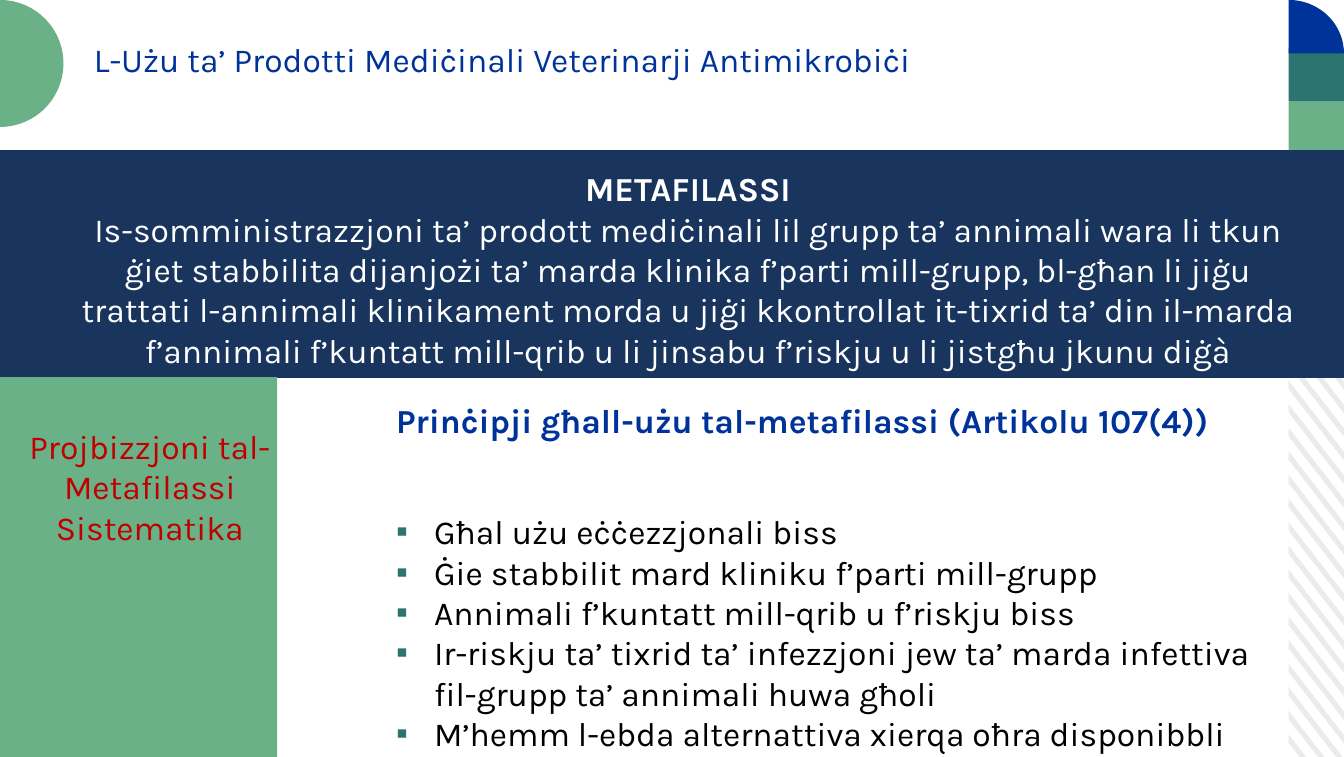
"""Build the slide on metaphylaxis in veterinary antimicrobial use."""
import math
from dataclasses import dataclass

import pptx
import pptx.dml.color
import pptx.enum.shapes
import pptx.enum.text
import pptx.oxml.ns
import pptx.util
from lxml import etree

Pt = pptx.util.Pt
ALIGN = pptx.enum.text.PP_ALIGN


@dataclass(frozen=True)
class Theme:
    """Hold the colours, font and type size."""
    font: str = "Karla"
    size: int = 24
    blue: str = "003399"
    navy: str = "19355D"
    teal: str = "2C7470"
    green: str = "6BB188"
    stripe: str = "ECEBEB"
    red: str = "C00000"
    white: str = "FFFFFF"
    black: str = "000000"


THEME = Theme()
SLIDE_WIDTH, SLIDE_HEIGHT = 960, 540.72
STRIP_LEFT, STRIP_WIDTH, BLOCK_HEIGHT = 920.5, 39.5, 38.16
BLOCKS_TOP, STRIPES_TOP = 34.56, 110.88

TITLE = "L-Użu ta’ Prodotti Mediċinali Veterinarji Antimikrobiċi"
TERM = "METAFILASSI"
DEFINITION = (
    "Is-somministrazzjoni ta’ prodott mediċinali lil grupp ta’ annimali wara li tkun "
    "ġiet stabbilita dijanjożi ta’ marda klinika f’parti mill-grupp, bl-għan li jiġu "
    "trattati l-annimali klinikament morda u jiġi kkontrollat it-tixrid ta’ din il-marda "
    "f’annimali f’kuntatt mill-qrib u li jinsabu f’riskju u li jistgħu jkunu diġà"
)
PROHIBITION = "Projbizzjoni tal-Metafilassi Sistematika"
HEADING = "Prinċipji għall-użu tal-metafilassi (Artikolu 107(4))"
PRINCIPLES = [
    "Għal użu eċċezzjonali biss",
    "Ġie stabbilit mard kliniku f’parti mill-grupp",
    "Annimali f’kuntatt mill-qrib u f’riskju biss",
    "Ir-riskju ta’ tixrid ta’ infezzjoni jew ta’ marda infettiva "
    "fil-grupp ta’ annimali huwa għoli",
    "M’hemm l-ebda alternattiva xierqa oħra disponibbli",
]


def paint(shape, colour):
    """Give a shape a flat fill with no line or shadow."""
    shape.shadow.inherit = False
    shape.fill.solid()
    shape.fill.fore_color.rgb = pptx.dml.color.RGBColor.from_string(colour)
    shape.line.fill.background()


def add_block(slide, left, top, width, height, colour):
    """Add a plain filled rectangle."""
    block = slide.shapes.add_shape(
        pptx.enum.shapes.MSO_SHAPE.RECTANGLE, Pt(left), Pt(top), Pt(width), Pt(height))
    paint(block, colour)


def add_outline(slide, contours, colour):
    """Add one freeform made of closed contours given in points."""
    contours = [[(Pt(x), Pt(y)) for x, y in contour] for contour in contours]
    builder = slide.shapes.build_freeform(*contours[0][0])
    for index, contour in enumerate(contours):
        if index:
            builder.move_to(*contour[0])
        builder.add_line_segments(contour[1:], close=True)
    paint(builder.convert_to_shape(), colour)


def add_sector(slide, centre, radii, end_angle, colour):
    """Add a sector that runs clockwise from the top to the end angle."""
    angles = [math.radians(degree) for degree in range(-90, end_angle + 1, 3)]
    arc = [(centre[0] + radii[0] * math.cos(angle), centre[1] + radii[1] * math.sin(angle))
           for angle in angles]
    add_outline(slide, [[centre] + arc], colour)


def stripe_edge(left_y, drop):
    """Return the ends of a slanted edge clipped to the stripe area."""
    slope = drop / STRIP_WIDTH
    start_y = max(left_y, STRIPES_TOP)
    end_y = min(left_y + drop, SLIDE_HEIGHT)
    return [(STRIP_LEFT + (y - left_y) / slope, y) for y in (start_y, end_y)]


def add_stripes(slide):
    """Add the diagonal hatching along the right side."""
    first, pitch, thickness, drop = 69.7, 16.85, 6, 51
    tops = [first + pitch * index for index in range(28)]
    contours = [stripe_edge(top, drop) + stripe_edge(top + thickness, drop)[::-1]
                for top in tops]
    add_outline(slide, contours, THEME.stripe)


def place(shape, left, top, width, height):
    """Move a text shape and set its wrapping and anchor."""
    shape.left, shape.top, shape.width, shape.height = map(Pt, (left, top, width, height))
    frame = shape.text_frame
    frame.word_wrap = True
    frame.auto_size = pptx.enum.text.MSO_AUTO_SIZE.NONE
    frame.vertical_anchor = pptx.enum.text.MSO_ANCHOR.TOP
    return frame


def format_paragraph(paragraph, colour, bold=False, align=ALIGN.LEFT):
    """Set spacing, alignment and run formatting."""
    paragraph.alignment = align
    paragraph.line_spacing = 1.0
    paragraph.space_before = Pt(0)
    for run in paragraph.runs:
        run.font.name = THEME.font
        run.font.size = Pt(THEME.size)
        run.font.bold = bold
        run.font.color.rgb = pptx.dml.color.RGBColor.from_string(colour)


def set_bullet(paragraph, character=None, indent=0):
    """Set a hanging bullet, or clear it when no character is given."""
    qn = pptx.oxml.ns.qn
    properties = paragraph._p.get_or_add_pPr()
    properties.set("marL", str(Pt(indent)))
    properties.set("indent", str(-Pt(indent)))
    if character is None:
        etree.SubElement(properties, qn("a:buNone"))
        return
    colour = etree.SubElement(properties, qn("a:buClr"))
    etree.SubElement(colour, qn("a:srgbClr"), val=THEME.teal)
    etree.SubElement(properties, qn("a:buChar"), char=character)


def add_title(slide):
    """Fill the title placeholder."""
    frame = place(slide.shapes.title, 59.8, 24.5, 640, 41.8)
    frame.text = TITLE
    format_paragraph(frame.paragraphs[0], THEME.blue)


def add_principles(slide):
    """Fill the body placeholder with the heading and its list."""
    frame = place(slide.placeholders[1], 275.8, 282.2, 626.4, 258)
    frame.text = "\n".join([HEADING] + PRINCIPLES)
    heading, *principles = frame.paragraphs
    format_paragraph(heading, THEME.blue, bold=True)
    heading.space_after = Pt(50.5)
    set_bullet(heading)
    for principle in principles:
        format_paragraph(principle, THEME.black)
        set_bullet(principle, "▪", 27)


def add_definition(slide):
    """Add the navy band with the term and its definition."""
    add_block(slide, 0, 107.28, SLIDE_WIDTH, 162.72, THEME.navy)
    frame = place(slide.shapes.add_textbox(0, 0, 0, 0), 41, 116.6, 900.7, 152.6)
    frame.text = TERM + "\n" + DEFINITION
    term, definition = frame.paragraphs
    format_paragraph(term, THEME.white, bold=True, align=ALIGN.CENTER)
    format_paragraph(definition, THEME.white, align=ALIGN.CENTER)


def add_prohibition(slide):
    """Add the green panel with the prohibition."""
    add_block(slide, 0, 269.3, 198, SLIDE_HEIGHT - 269.3, THEME.green)
    frame = place(slide.shapes.add_textbox(0, 0, 0, 0), 8, 300.6, 198, 94)
    frame.text = PROHIBITION
    format_paragraph(frame.paragraphs[0], THEME.red, align=ALIGN.CENTER)


def add_decoration(slide):
    """Add the hatching, the coloured strip and the half circle."""
    add_stripes(slide)
    for index, colour in enumerate((THEME.teal, THEME.green)):
        add_block(slide, STRIP_LEFT, BLOCKS_TOP + BLOCK_HEIGHT * index,
                  STRIP_WIDTH, BLOCK_HEIGHT, colour)
    add_sector(slide, (STRIP_LEFT, BLOCK_HEIGHT), (STRIP_WIDTH, BLOCK_HEIGHT), 0, THEME.blue)
    add_sector(slide, (0, 45.36), (45.36, 45.36), 90, THEME.green)


def main():
    """Build and save the slide."""
    deck = pptx.Presentation()
    deck.slide_width, deck.slide_height = Pt(SLIDE_WIDTH), Pt(SLIDE_HEIGHT)
    slide = deck.slides.add_slide(deck.slide_layouts[1])
    add_decoration(slide)
    add_title(slide)
    add_principles(slide)
    add_definition(slide)
    add_prohibition(slide)
    deck.save("out.pptx")


if __name__ == "__main__":
    main()
